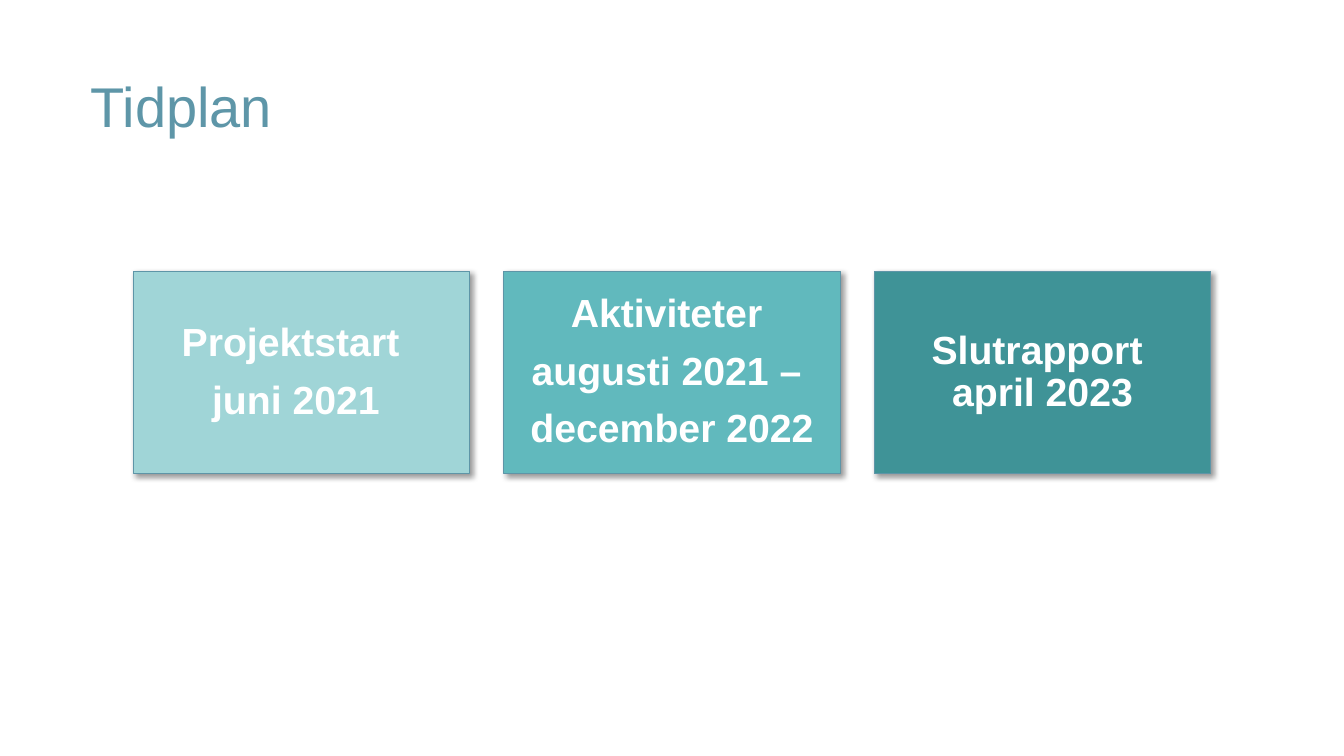
from pptx import Presentation
from pptx.dml.color import RGBColor
from pptx.enum.shapes import MSO_SHAPE
from pptx.enum.text import MSO_ANCHOR, PP_ALIGN
from pptx.oxml import parse_xml
from pptx.oxml.ns import nsdecls
from pptx.util import Inches, Pt

WHITE = RGBColor(0xFF, 0xFF, 0xFF)
TITLE_BLUE = RGBColor(0x5E, 0x96, 0xA8)
BORDER_BLUE = RGBColor(0x5E, 0x95, 0xA7)
PALE_TEAL = RGBColor(0xA0, 0xD5, 0xD7)
MID_TEAL = RGBColor(0x61, 0xB9, 0xBD)
DARK_TEAL = RGBColor(0x3F, 0x93, 0x97)

PHASE_LEFT, PHASE_TOP = 1.32, 2.69
PHASE_WIDTH, PHASE_HEIGHT = 3.34, 2.01
PHASE_STEP = 3.675

PHASES = [
    (["Projektstart ", "juni 2021"], PALE_TEAL, 0.11),
    (["Aktiviteter ", "augusti 2021 – ", "december 2022"], MID_TEAL, 0),
    (["Slutrapport \vapril 2023"], DARK_TEAL, 0),
]

SHADOW_XML = (
    f'<a:effectLst {nsdecls("a")}>'
    '<a:outerShdw blurRad="50800" dist="38100" dir="2700000" algn="tl" rotWithShape="0">'
    '<a:srgbClr val="000000"><a:alpha val="40000"/></a:srgbClr>'
    '</a:outerShdw></a:effectLst>'
)


def write_text(frame, lines, *, size, color, font="Arial", bold=False,
               align=PP_ALIGN.LEFT, space_after=0, first_indent=0, inset=(0.1, 0.05)):
    frame.word_wrap = True
    frame.vertical_anchor = MSO_ANCHOR.MIDDLE
    frame.margin_left = frame.margin_right = Inches(inset[0])
    frame.margin_top = frame.margin_bottom = Inches(inset[1])
    for index, line in enumerate(lines):
        paragraph = frame.add_paragraph() if index else frame.paragraphs[0]
        paragraph.text = line
        paragraph.alignment = align
        paragraph.line_spacing = 0.9
        paragraph.space_after = Pt(space_after)
        if first_indent and index == 0:
            paragraph._p.get_or_add_pPr().set("marR", str(Inches(first_indent)))
        for run in paragraph.runs:
            run.font.name = font
            run.font.size = Pt(size)
            run.font.bold = bold
            run.font.color.rgb = color


class TimelineSlide:
    def __init__(self, presentation):
        self.slide = presentation.slides.add_slide(presentation.slide_layouts[6])
        self.border_color = BORDER_BLUE
        self.border_width = Pt(0.75)

    def title(self, text):
        heading = self.slide.shapes.add_textbox(
            Inches(0.8), Inches(0.64), Inches(11.48), Inches(0.89))
        write_text(heading.text_frame, [text], size=40, color=TITLE_BLUE)

    def phase(self, left, lines, fill, first_indent):
        card = self.slide.shapes.add_shape(
            MSO_SHAPE.RECTANGLE, Inches(left), Inches(PHASE_TOP),
            Inches(PHASE_WIDTH), Inches(PHASE_HEIGHT))
        card.fill.solid()
        card.fill.fore_color.rgb = fill
        card.line.color.rgb = self.border_color
        card.line.width = self.border_width
        card._element.spPr.append(parse_xml(SHADOW_XML))
        write_text(card.text_frame, lines, size=28, color=WHITE, bold=True,
                   align=PP_ALIGN.CENTER, space_after=11,
                   first_indent=first_indent, inset=(0.12, 0.12))


def main():
    presentation = Presentation()
    presentation.slide_width = Inches(13.33)
    presentation.slide_height = Inches(7.5)
    timeline = TimelineSlide(presentation)
    timeline.title("Tidplan")
    for position, (lines, fill, first_indent) in enumerate(PHASES):
        timeline.phase(PHASE_LEFT + position * PHASE_STEP, lines, fill, first_indent)
    presentation.save("out.pptx")


if __name__ == "__main__":
    main()
